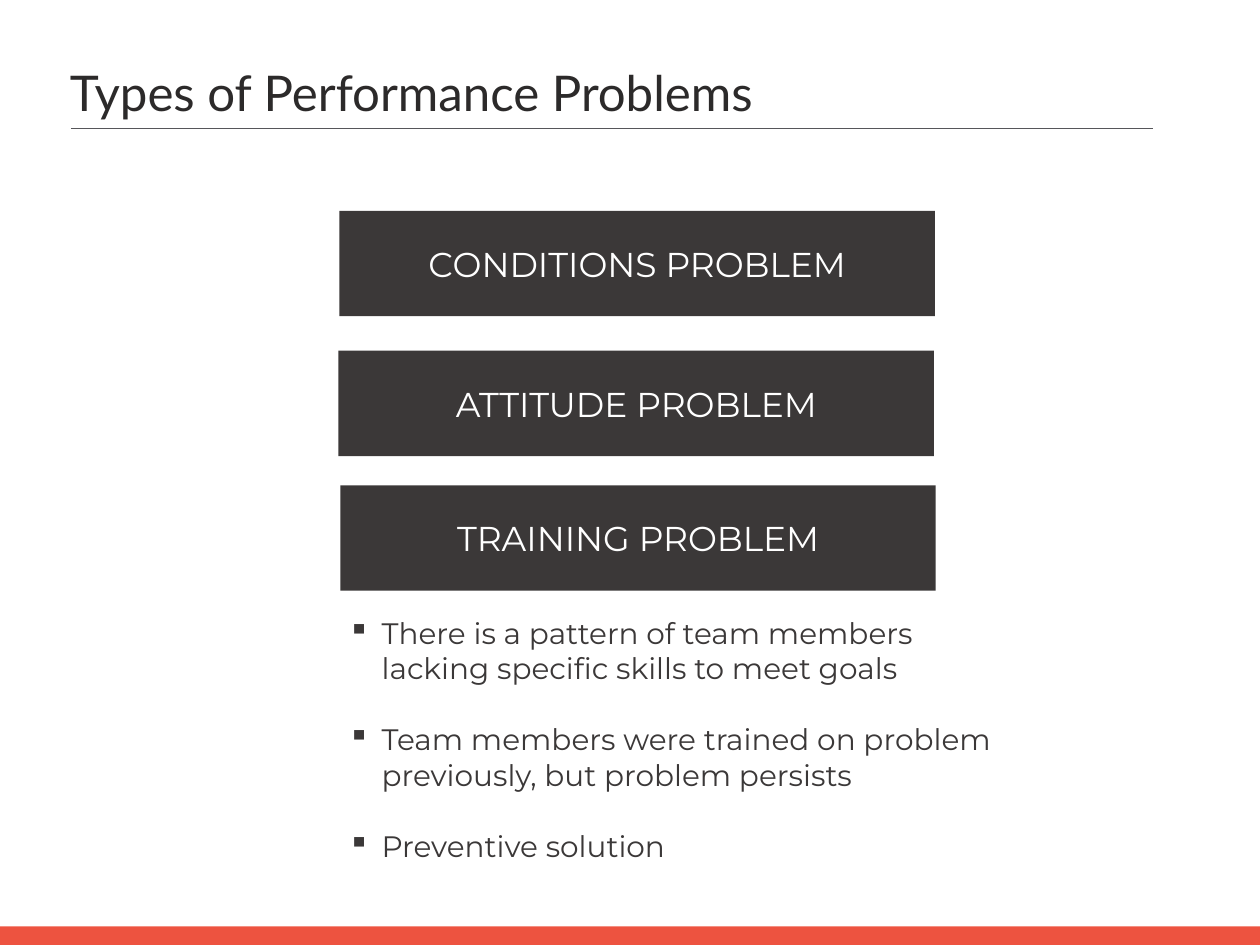
"""Build the slide on types of performance problems."""
from dataclasses import dataclass

import lxml.etree
import pptx
import pptx.dml.color
import pptx.enum.shapes
import pptx.enum.text
import pptx.oxml.ns
import pptx.presentation
import pptx.shapes.autoshape
import pptx.slide
import pptx.util
from pptx.util import Inches

RED = pptx.dml.color.RGBColor(0xED, 0x53, 0x40)
INK = pptx.dml.color.RGBColor(0x2C, 0x2A, 0x2A)
RULE_GRAY = pptx.dml.color.RGBColor(0x56, 0x56, 0x5A)
CHARCOAL = pptx.dml.color.RGBColor(0x3B, 0x38, 0x38)
WHITE = pptx.dml.color.RGBColor(0xFF, 0xFF, 0xFF)


@dataclass(frozen=True)
class Problem:
    label: str
    left: float
    top: float


PROBLEMS = [
    Problem("CONDITIONS PROBLEM", 3.83, 2.38),
    Problem("ATTITUDE PROBLEM", 3.82, 3.96),
    Problem("TRAINING PROBLEM", 3.84, 5.48),
]
TRAINING_SIGNS = [
    "There is a pattern of team members lacking specific skills to meet goals",
    "Team members were trained on problem previously, but problem persists",
    "Preventive solution",
]


def set_font(paragraph, name: str, size: int, color: pptx.dml.color.RGBColor) -> None:
    paragraph.font.name = name
    paragraph.font.size = pptx.util.Pt(size)
    paragraph.font.color.rgb = color


def add_block(page: pptx.slide.Slide, left: float, top: float, width: float, height: float,
              color: pptx.dml.color.RGBColor) -> pptx.shapes.autoshape.Shape:
    block = page.shapes.add_shape(pptx.enum.shapes.MSO_SHAPE.RECTANGLE, Inches(left),
                                  Inches(top), Inches(width), Inches(height))
    block.shadow.inherit = False
    block.fill.solid()
    block.fill.fore_color.rgb = color
    block.line.fill.background()
    return block


def add_title(page: pptx.slide.Slide) -> None:
    box = page.shapes.add_textbox(Inches(0.69), Inches(0.68), Inches(12.78), Inches(0.72))
    frame = box.text_frame
    frame.word_wrap = True
    frame.vertical_anchor = pptx.enum.text.MSO_ANCHOR.MIDDLE
    frame.text = "Types of Performance Problems"
    set_font(frame.paragraphs[0], "Lato", 40, INK)
    rule = page.shapes.add_connector(pptx.enum.shapes.MSO_CONNECTOR.STRAIGHT, Inches(0.8),
                                     Inches(1.45), Inches(13.01), Inches(1.45))
    rule.line.color.rgb = RULE_GRAY
    rule.line.width = pptx.util.Pt(1)
    lxml.etree.SubElement(rule.element.spPr, pptx.oxml.ns.qn("a:effectLst"))


def add_problem(page: pptx.slide.Slide, problem: Problem) -> None:
    block = add_block(page, problem.left, problem.top, 6.72, 1.19, CHARCOAL)
    frame = block.text_frame
    frame.word_wrap = True
    frame.margin_left = frame.margin_right = Inches(0.3)
    frame.vertical_anchor = pptx.enum.text.MSO_ANCHOR.MIDDLE
    frame.text = problem.label
    paragraph = frame.paragraphs[0]
    paragraph.alignment = pptx.enum.text.PP_ALIGN.CENTER
    set_font(paragraph, "Montserrat", 28, WHITE)


def add_signs(page: pptx.slide.Slide) -> None:
    box = page.shapes.add_textbox(Inches(3.83), Inches(6.89), Inches(7.66), Inches(3.74))
    frame = box.text_frame
    frame.word_wrap = True
    frame.text = "\n".join(TRAINING_SIGNS)
    for index, paragraph in enumerate(frame.paragraphs):
        if index:
            paragraph.space_before = pptx.util.Pt(29)
        properties = paragraph._p.get_or_add_pPr()
        properties.set("marL", str(Inches(0.38)))
        properties.set("indent", str(Inches(-0.38)))
        bullet = lxml.etree.SubElement(properties, pptx.oxml.ns.qn("a:buChar"))
        bullet.set("char", "▪")
        set_font(paragraph, "Montserrat", 24, CHARCOAL)


def main() -> None:
    deck = pptx.Presentation()
    deck.slide_width = Inches(14.22)
    deck.slide_height = Inches(10.67)
    page = deck.slides.add_slide(deck.slide_layouts[6])
    add_block(page, 0, 10.46, 14.22, 0.21, RED)
    add_title(page)
    for problem in PROBLEMS:
        add_problem(page, problem)
    add_signs(page)
    deck.save("out.pptx")


if __name__ == "__main__":
    main()
